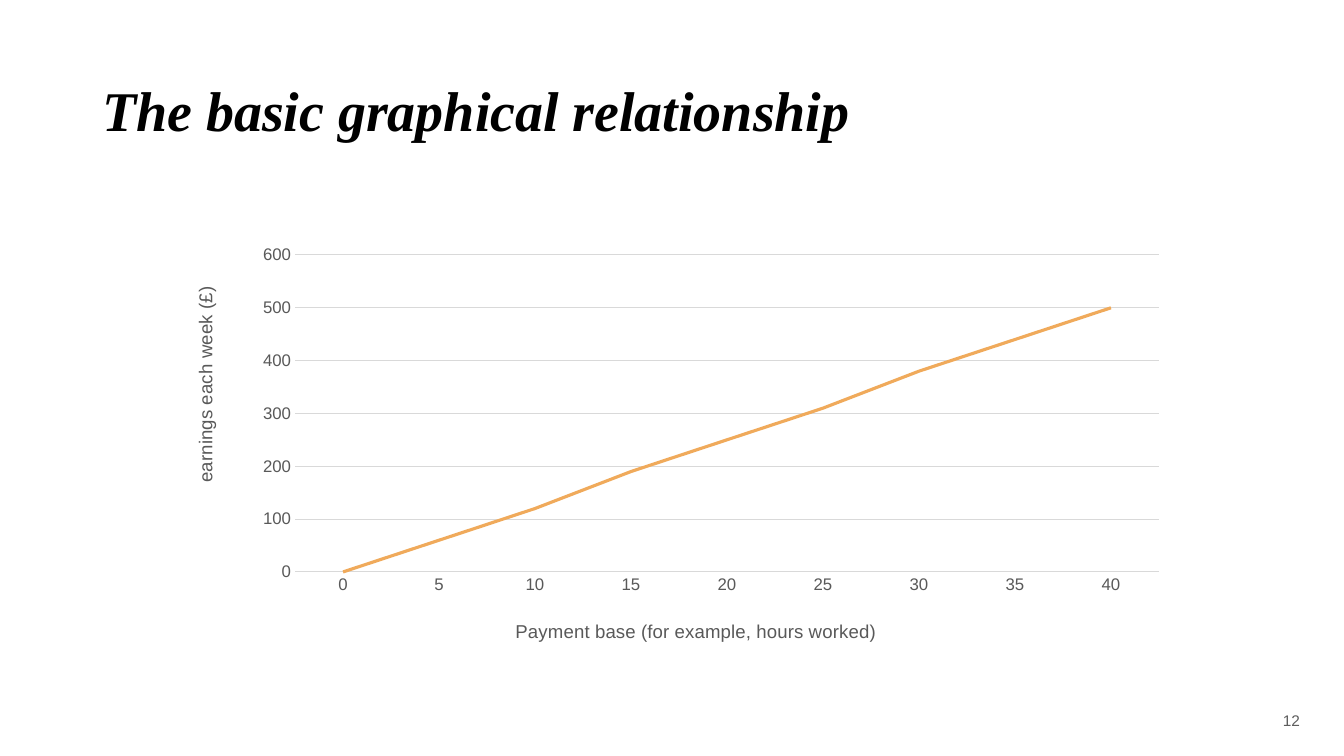
from dataclasses import dataclass

from lxml import etree
from pptx import Presentation
from pptx import util as u
from pptx.chart.data import CategoryChartData
from pptx.dml.color import RGBColor
from pptx.enum import chart as charts
from pptx.enum import text
from pptx.oxml import parse_xml
from pptx.oxml.ns import nsdecls

EMU_PER_PX = 914400 / 100.8
GREY, GRID, ORANGE = "595959", "D9D9D9", "F0AA5B"
HOURLY_PAY = 12.5


@dataclass(frozen=True)
class Box:
    left: int
    top: int
    width: int
    height: int

    def emu(self) -> tuple[u.Emu, ...]:
        return tuple(px(n) for n in (self.left, self.top, self.width, self.height))


@dataclass(frozen=True)
class AxisTitle:
    wording: str
    left: int
    top: int


SLIDE = Box(0, 0, 1344, 756)
TITLE = Box(92, 40, 1206, 146)
CHART = Box(163, 171, 1029, 484)
PLOT = Box(295, 255, 864, 317)
PAGE_NUMBER = Box(1236, 700, 74, 40)
HOURS_TITLE = AxisTitle("Payment base (for example, hours worked)", 512, 616)
EARNINGS_TITLE = AxisTitle("earnings each week (£)", 190, 283)


def px(length: int) -> u.Emu:
    return u.Emu(round(length * EMU_PER_PX))


def colour(value: str) -> RGBColor:
    return RGBColor.from_string(value)


def style_font(font, name: str, size: float, value: str) -> None:
    font.name, font.size = name, u.Pt(size)
    font.color.rgb = colour(value)


def style_line(line, value: str, width: float) -> None:
    line.color.rgb = colour(value)
    line.width = u.Pt(width)


def fill_frame(frame, wording: str, box: Box, shape) -> None:
    """Place a text shape and set its wording, centred vertically."""
    shape.left, shape.top, shape.width, shape.height = box.emu()
    frame.text = wording
    frame.word_wrap = True
    frame.auto_size = text.MSO_AUTO_SIZE.NONE
    frame.vertical_anchor = text.MSO_ANCHOR.MIDDLE


def manual_layout(left: int, top: int, size: Box | None = None) -> etree._Element:
    """Express a place on the slide as fractions of the chart."""
    parts = {
        "xMode": "edge",
        "yMode": "edge",
        "x": round((left - CHART.left) / CHART.width, 4),
        "y": round((top - CHART.top) / CHART.height, 4),
    }
    if size:
        parts = {"layoutTarget": "inner", **parts,
                 "w": round(size.width / CHART.width, 4),
                 "h": round(size.height / CHART.height, 4)}
    children = "".join(f'<c:{tag} val="{value}"/>' for tag, value in parts.items())
    return parse_xml(f'<c:layout {nsdecls("c")}><c:manualLayout>{children}'
                     "</c:manualLayout></c:layout>")


def replace_layout(parent, index: int, layout: etree._Element) -> None:
    for old in parent.xpath("./c:layout"):
        parent.remove(old)
    parent.insert(index, layout)


def style_axis(axis, title: AxisTitle) -> None:
    axis.major_tick_mark = axis.minor_tick_mark = charts.XL_TICK_MARK.NONE
    style_font(axis.tick_labels.font, "Arial", 12, GREY)
    frame = axis.axis_title.text_frame
    frame.text = title.wording
    font = frame.paragraphs[0].runs[0].font
    style_font(font, "Arial", 13.3, GREY)
    font.bold = False
    replace_layout(axis.axis_title._element, 1, manual_layout(title.left, title.top))


def add_title(slide) -> None:
    shape = slide.shapes.title
    fill_frame(shape.text_frame, "The basic graphical relationship", TITLE, shape)
    paragraph = shape.text_frame.paragraphs[0]
    paragraph.alignment = text.PP_ALIGN.LEFT
    paragraph.line_spacing = 0.9
    font = paragraph.runs[0].font
    style_font(font, "Times New Roman", 40, "000000")
    font.bold = font.italic = True


def add_page_number(slide) -> None:
    shape = slide.shapes.add_textbox(*PAGE_NUMBER.emu())
    fill_frame(shape.text_frame, "12", PAGE_NUMBER, shape)
    paragraph = shape.text_frame.paragraphs[0]
    paragraph.alignment = text.PP_ALIGN.RIGHT
    style_font(paragraph.runs[0].font, "Arial", 11, "5E5E5E")


def add_earnings_chart(slide) -> None:
    hours = range(0, 41, 5)
    data = CategoryChartData()
    data.categories = [str(hour) for hour in hours]
    data.add_series("Series 1", [int(round(hour * HOURLY_PAY, -1)) for hour in hours])
    chart = slide.shapes.add_chart(charts.XL_CHART_TYPE.LINE, *CHART.emu(), data).chart
    chart.has_legend = chart.has_title = False
    style_font(chart.font, "Arial", 10, "000000")

    plot = chart.plots[0]
    plot.vary_by_categories = False
    series = plot.series[0]
    series.smooth = False
    series.marker.style = charts.XL_MARKER_STYLE.NONE
    style_line(series.format.line, ORANGE, 2.25)

    style_axis(chart.category_axis, HOURS_TITLE)
    style_line(chart.category_axis.format.line, GRID, 0.75)
    earnings = chart.value_axis
    style_axis(earnings, EARNINGS_TITLE)
    earnings.minimum_scale, earnings.maximum_scale, earnings.major_unit = 0, 600, 100
    earnings.format.line.fill.background()
    style_line(earnings.major_gridlines.format.line, GRID, 0.75)
    plot_area = chart._chartSpace.chart.plotArea
    replace_layout(plot_area, 0, manual_layout(PLOT.left, PLOT.top, PLOT))


def main() -> None:
    presentation = Presentation()
    presentation.slide_width, presentation.slide_height = px(SLIDE.width), px(SLIDE.height)
    slide = presentation.slides.add_slide(presentation.slide_layouts[5])
    add_page_number(slide)
    add_title(slide)
    add_earnings_chart(slide)
    presentation.save("out.pptx")


if __name__ == "__main__":
    main()
